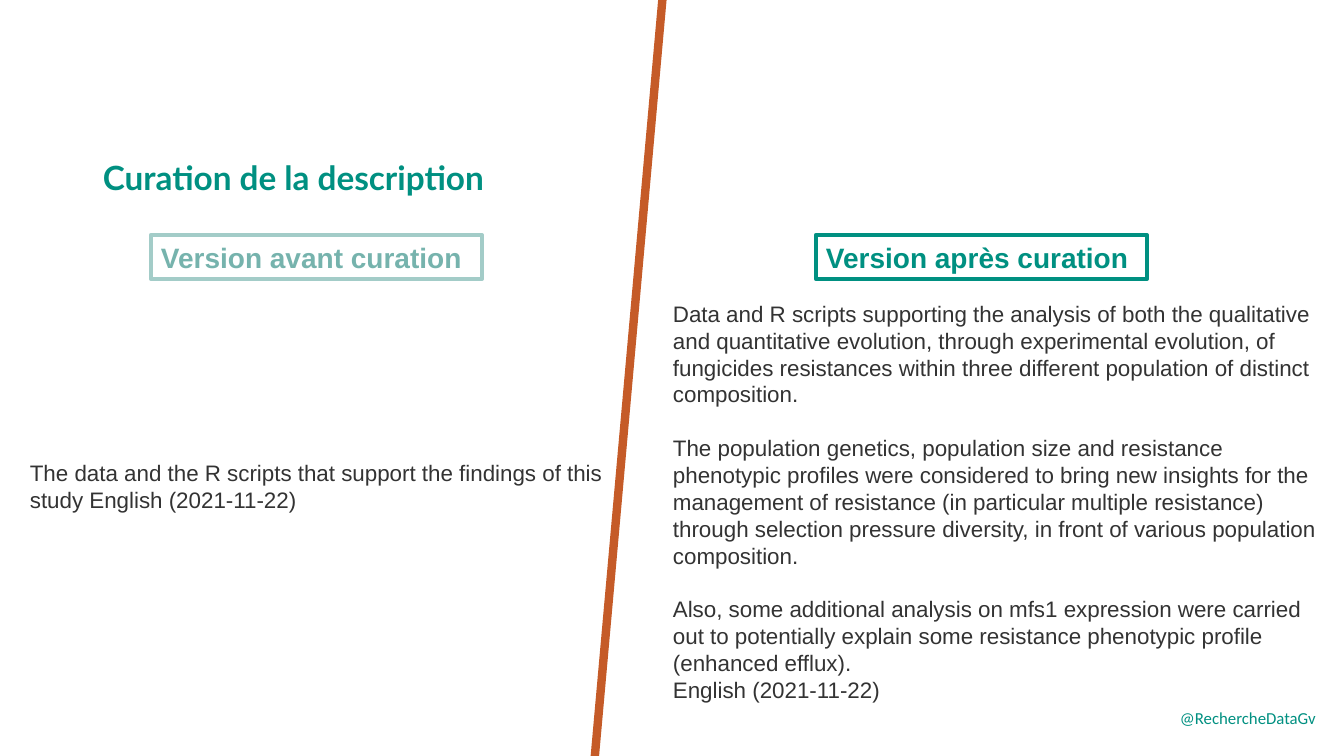
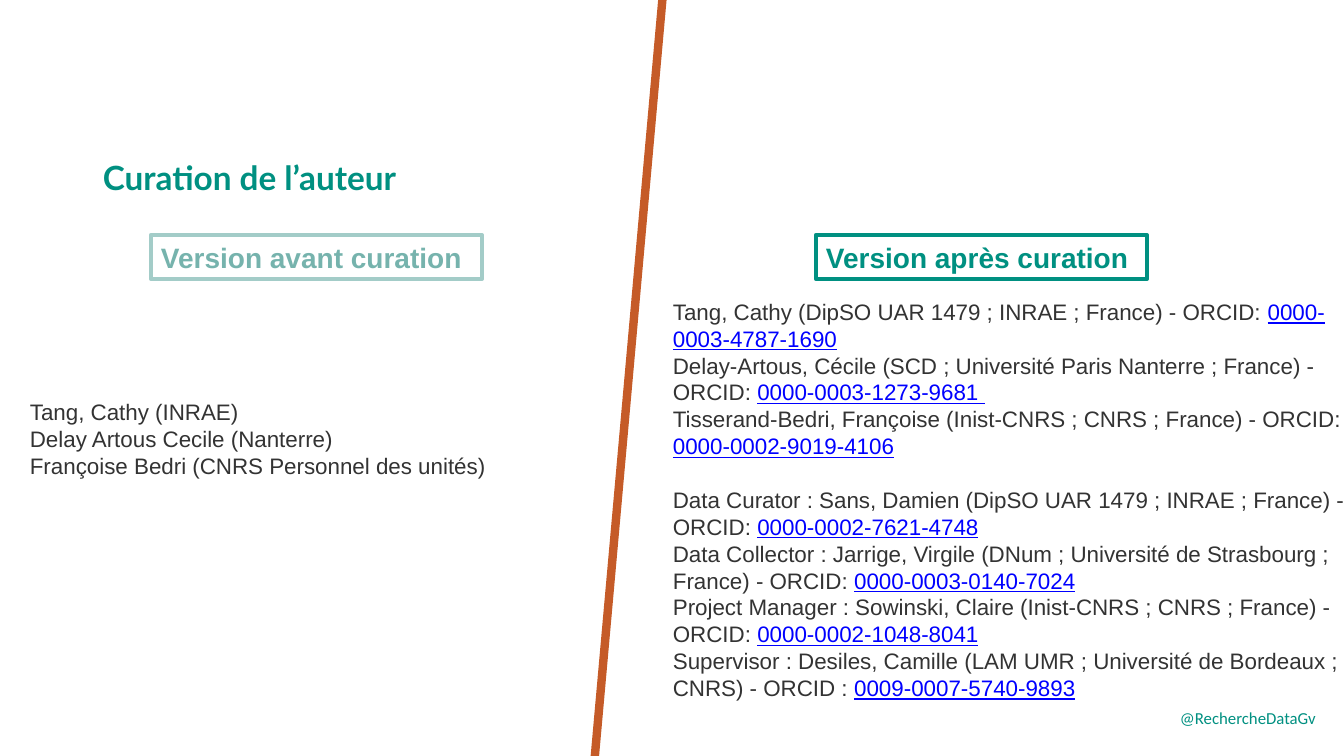
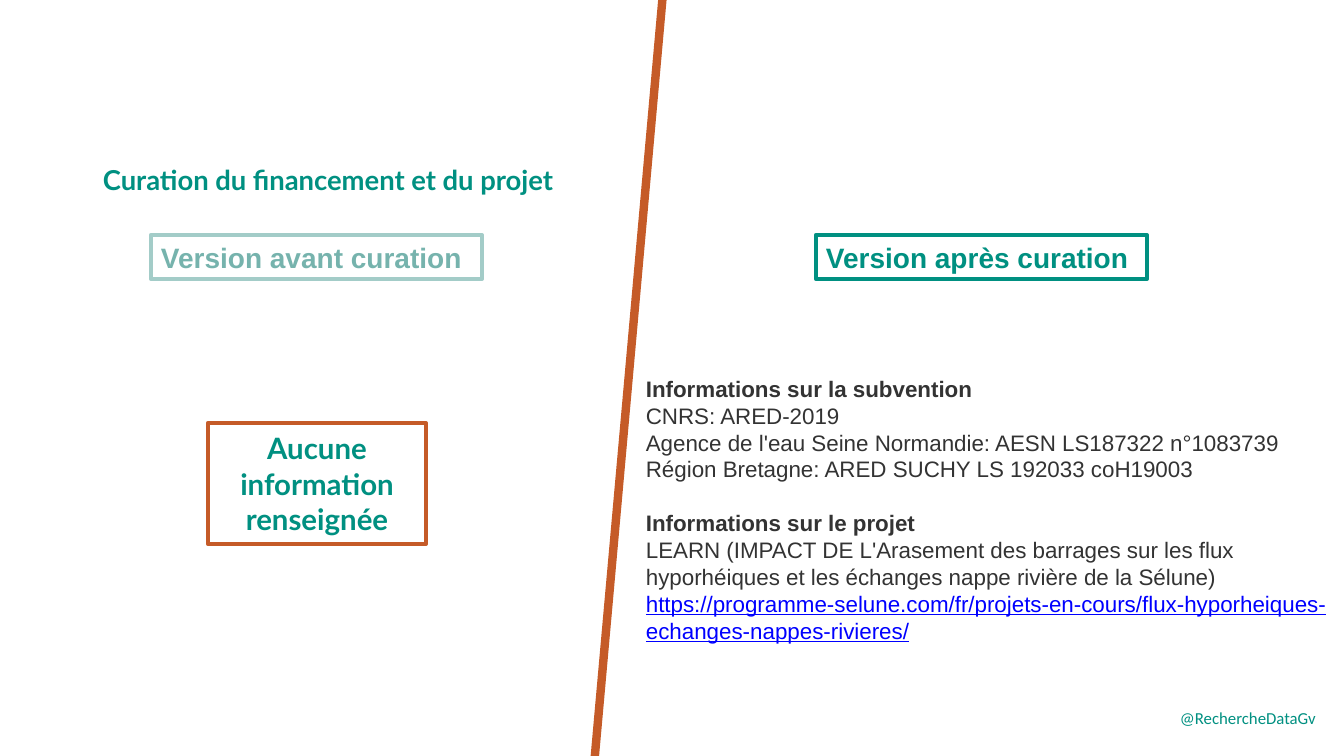
"""Build three before/after slides on the curation of dataset metadata."""
import pptx
import pptx.dml.color
import pptx.enum.shapes
import pptx.enum.text
import pptx.oxml
import pptx.util

PX = 914400 / 100.8
THEME = {
    "teal": "009081", "pale": "A3CCC8", "muted": "76B3AD", "rust": "C55B28",
    "ink": "333333", "link": "0000FF",
    "body_font": "Arial", "title_font": "Lato", "footer_font": "Calibri",
    "body": 16, "label": 20, "note": 21, "footer": 12, "gap": 19.2,
}


def px(*lengths):
    return [pptx.util.Emu(round(length * PX)) for length in lengths]


def style(span, font, size, color, bold=False, underline=False):
    span.font.name = font
    span.font.size = pptx.util.Pt(size)
    span.font.color.rgb = pptx.dml.color.RGBColor.from_string(THEME[color])
    span.font.bold = bold
    span.font.underline = underline


LABELS = [
    (816, "Version après curation", "teal", "teal"),
    (151, "Version avant curation", "pale", "muted"),
]

SLIDES = [
    {
        "title": ("Curation de la description", 23.8, 0.7),
        "panels": [
            ((20, 454, 594, 64), [
                [("plain", "The data and the R scripts that support the findings of this study English (2021-11-22)")],
            ], []),
            ((663, 295, 672, 413), [
                [("plain", "Data and R scripts supporting the analysis of both the qualitative and quantitative evolution, through experimental evolution, of fungicides resistances within three different population of distinct composition.")],
                [("plain", "The population genetics, population size and resistance phenotypic profiles were considered to bring new insights for the management of resistance (in particular multiple resistance) through selection pressure diversity, in front of various population composition.")],
                [("plain", "Also, some additional analysis on mfs1 expression were carried out to potentially explain some resistance phenotypic profile (enhanced efflux).")],
                [("plain", "English (2021-11-22)")],
            ], [1, 2]),
        ],
    },
    {
        "title": ("Curation de l’auteur", 23.8, 0.7),
        "panels": [
            ((20, 393, 594, 91), [
                [("plain", "Tang, Cathy (INRAE)")],
                [("plain", "Delay Artous Cecile (Nanterre)")],
                [("plain", "Françoise Bedri (CNRS Personnel des unités)")],
            ], []),
            ((663, 293, 696, 413), [
                [("plain", "Tang, Cathy (DipSO UAR 1479 ; INRAE ; France) - ORCID: "), ("link", "0000-0003-4787-1690")],
                [("plain", "Delay-Artous, Cécile (SCD ; Université Paris Nanterre ; France) - ORCID: "), ("link", "0000-0003-1273-9681 ")],
                [("plain", "Tisserand-Bedri, Françoise (Inist-CNRS ; CNRS ; France) - ORCID: "), ("link", "0000-0002-9019-4106")],
                [("plain", "Data Curator : Sans, Damien (DipSO UAR 1479 ; INRAE ; France) - ORCID: "), ("link", "0000-0002-7621-4748")],
                [("plain", "Data Collector : Jarrige, Virgile (DNum ; Université de Strasbourg ; France) - ORCID: "), ("link", "0000-0003-0140-7024")],
                [("plain", "Project Manager : Sowinski, Claire (Inist-CNRS ; CNRS ; France) - ORCID: "), ("link", "0000-0002-1048-8041")],
                [("plain", "Supervisor : Desiles, Camille (LAM UMR ; Université de Bordeaux ; CNRS) - ORCID : "), ("link", "0009-0007-5740-9893")],
            ], [3]),
        ],
    },
    {
        "title": ("Curation du financement et du projet", 19.6, 0.84),
        "panels": [
            ((636, 370, 708, 285), [
                [("bold", "Informations sur la subvention")],
                [("plain", "CNRS: ARED-2019")],
                [("plain", "Agence de l'eau Seine Normandie: AESN LS187322 n°1083739")],
                [("plain", "Région Bretagne: ARED SUCHY LS 192033 coH19003")],
                [("bold", "Informations sur le projet")],
                [("plain", "LEARN (IMPACT DE L'Arasement des barrages sur les flux hyporhéiques et les échanges nappe rivière de la Sélune) "),
                 ("link", "https://programme-selune.com/fr/projets-en-cours/flux-hyporheiques-echanges-nappes-rivieres/")],
            ], [4]),
        ],
        "note": "Aucune information renseignée",
    },
]

deck = pptx.Presentation()
deck.slide_width, deck.slide_height = px(1344, 756)

for content in SLIDES:
    page = deck.slides.add_slide(deck.slide_layouts[6])

    footer = page.shapes.add_textbox(*px(1170, 703, 163, 50))
    footer.text_frame.word_wrap = True
    footer.text_frame.text = "@RechercheDataGv"
    style(footer.text_frame.paragraphs[0].runs[0], THEME["footer_font"], THEME["footer"], "teal")

    frames = [((left, 235, 331, 44), text, line, color, THEME["body_font"], THEME["label"],
               pptx.enum.text.PP_ALIGN.LEFT) for left, text, line, color in LABELS]
    if "note" in content:
        frames.append(((208, 423, 218, 121), content["note"], "rust", "teal", THEME["title_font"],
                       THEME["note"], pptx.enum.text.PP_ALIGN.CENTER))
    for bounds, text, line, color, font, size, align in frames:
        box = page.shapes.add_shape(pptx.enum.shapes.MSO_SHAPE.RECTANGLE, *px(*bounds))
        box.shadow.inherit = False
        box.fill.background()
        box.line.color.rgb = pptx.dml.color.RGBColor.from_string(THEME[line])
        box.line.width = pptx.util.Pt(3)
        box.text_frame.word_wrap = True
        box.text_frame.vertical_anchor = pptx.enum.text.MSO_ANCHOR.MIDDLE
        box.text_frame.text = text
        para = box.text_frame.paragraphs[0]
        para.alignment = align
        style(para.runs[0], font, size, color, bold=True)

    divider = page.shapes.add_connector(
        pptx.enum.shapes.MSO_CONNECTOR.STRAIGHT, *px(663, -7, 594, 766))
    divider.line.color.rgb = pptx.dml.color.RGBColor.from_string(THEME["rust"])
    divider.line.width = pptx.util.Pt(6)
    divider.element.spPr.append(pptx.oxml.parse_xml(
        '<a:effectLst xmlns:a="http://schemas.openxmlformats.org/drawingml/2006/main"/>'))

    for bounds, paragraphs, gaps in content["panels"]:
        box = page.shapes.add_textbox(*px(*bounds))
        box.text_frame.word_wrap = True
        for index, pieces in enumerate(paragraphs):
            para = box.text_frame.add_paragraph() if index else box.text_frame.paragraphs[0]
            if index in gaps:
                para.space_before = pptx.util.Pt(THEME["gap"])
            for kind, text in pieces:
                span = para.add_run()
                span.text = text
                style(span, THEME["body_font"], THEME["body"], "link" if kind == "link" else "ink",
                      bold=kind == "bold", underline=kind == "link")

    text, size, spacing = content["title"]
    title = page.shapes.add_textbox(*px(93, 163, 543, 40))
    title.text_frame.word_wrap = True
    title.text_frame.text = text
    title.text_frame.paragraphs[0].line_spacing = spacing
    style(title.text_frame.paragraphs[0].runs[0], THEME["title_font"], size, "teal", bold=True)

deck.save("out.pptx")
